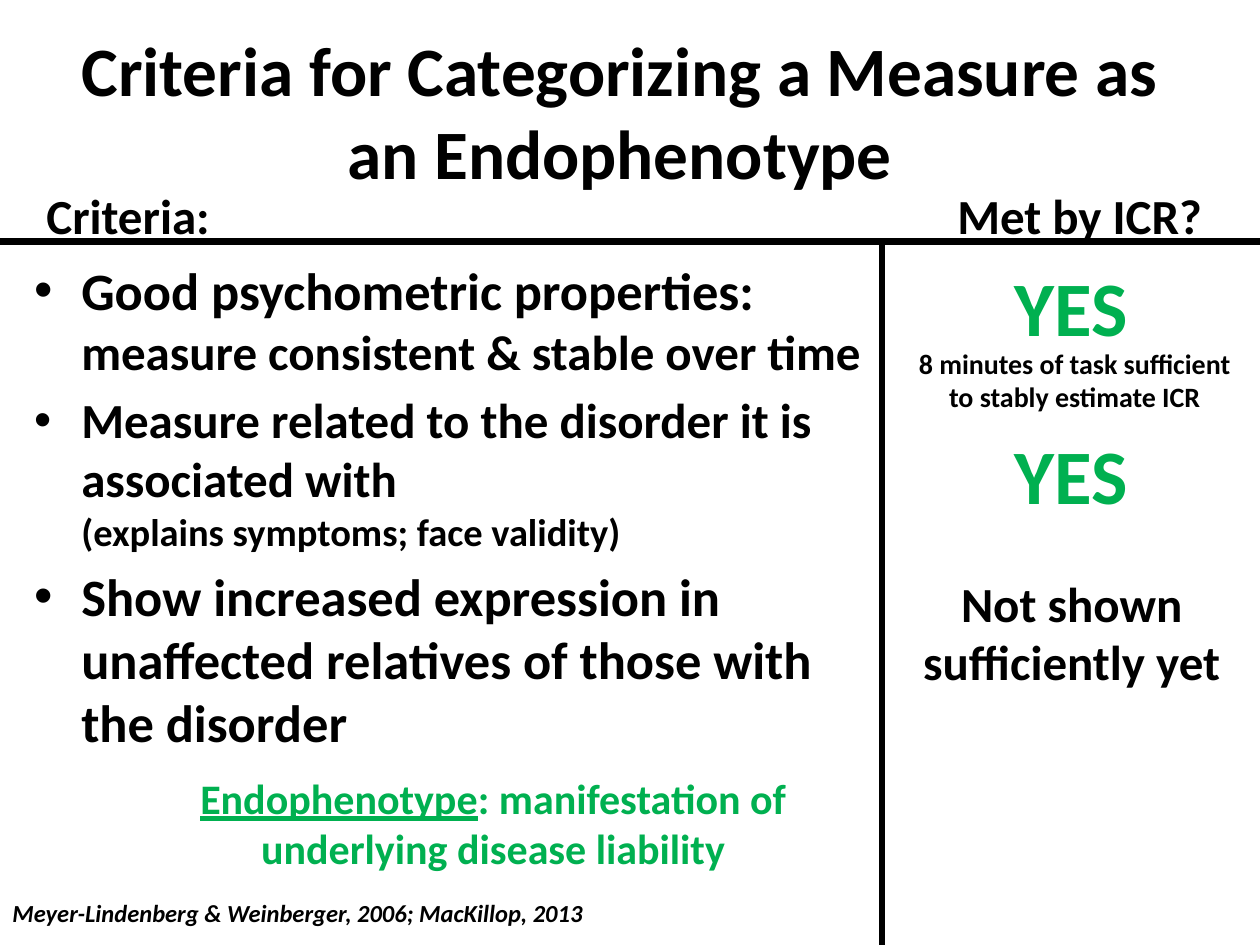
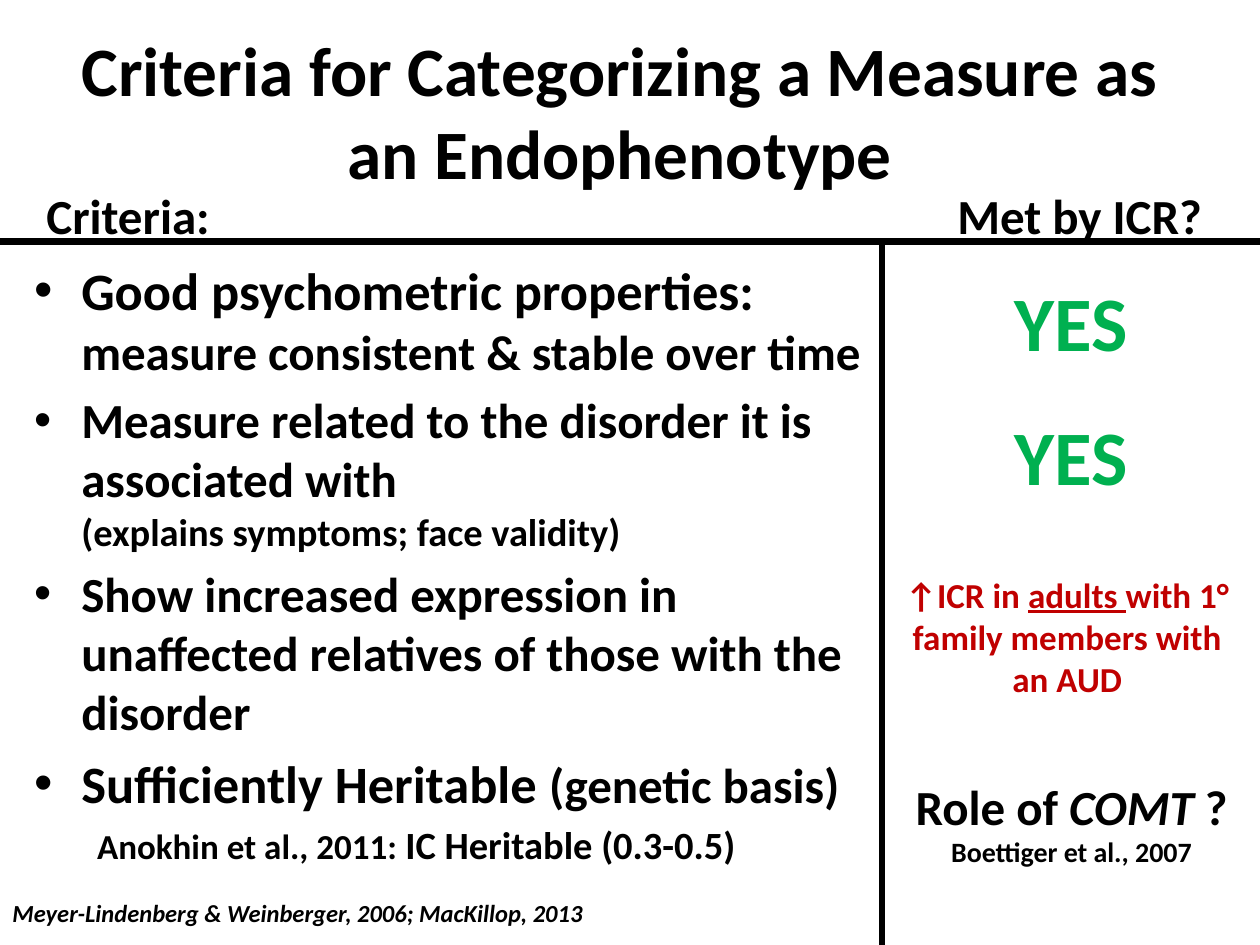
"""Build two slides that check ICR against the criteria for an endophenotype."""
import lxml.etree
import pptx
import pptx.dml.color
import pptx.enum.shapes
import pptx.enum.text
import pptx.oxml.ns
import pptx.util

Inches = pptx.util.Inches
Pt = pptx.util.Pt
qn = pptx.oxml.ns.qn
ALIGN = pptx.enum.text.PP_ALIGN
ANCHOR = pptx.enum.text.MSO_ANCHOR
BLACK = pptx.dml.color.RGBColor(0x00, 0x00, 0x00)
GREEN = pptx.dml.color.RGBColor(0x00, 0xB0, 0x50)
RED = pptx.dml.color.RGBColor(0xC0, 0x00, 0x00)
FONT = "Calibri"
LEFT, CENTER = ALIGN.LEFT, ALIGN.CENTER


def add_spans(para, spans, color=BLACK):
    """Add bold runs given as (text, size, style); a line break may lead a text."""
    for text, size, style in spans:
        if text.startswith("\n"):
            para.add_line_break()
            line_break = para._p.findall(qn("a:br"))[-1]
            lxml.etree.SubElement(line_break, qn("a:rPr"), sz=str(size * 100))
        span = para.add_run()
        span.text = text.lstrip("\n")
        span.font.name = FONT
        span.font.size = Pt(size)
        span.font.bold = True
        span.font.italic = style == "italic"
        span.font.underline = style == "underline"
        span.font.color.rgb = color


def add_label(page, bounds, align, color, *lines):
    """Add a wrapping text box with one paragraph for each list of spans."""
    box = page.shapes.add_textbox(*map(Inches, bounds))
    frame = box.text_frame
    frame.word_wrap = True
    for index, spans in enumerate(lines):
        para = frame.add_paragraph() if index else frame.paragraphs[0]
        para.alignment = align
        add_spans(para, spans, color)


TITLE = "Criteria for Categorizing a Measure as an Endophenotype"
SOURCE = "Meyer-Lindenberg & Weinberger, 2006; MacKillop, 2013"
RELATIVES = "Show increased expression in unaffected relatives of those with the disorder"
SHARED_CRITERIA = [
    [("Good psychometric properties: ", 30, ""),
     ("measure consistent & stable over time", 28, "")],
    [("Measure related to the disorder it is associated with", 28, ""),
     ("\n(explains symptoms; face validity)", 22, "")],
]
HERITABLE = [("Sufficiently Heritable ", 30, ""), ("(genetic basis)", 28, "")]
HERITABLE_EVIDENCE = [("Anokhin et al., 2011: ", 20, ""),
                      ("IC Heritable (0.3-0.5)", 22, "")]

SLIDES = [
    {
        "criteria": [[(RELATIVES, 30, "")]],
        "evidence": None,
        "yes_tops": (2.01, 3.34),
        "labels": [
            ((7.15, 2.7, 2.76, 0.64), BLACK,
             [("8 minutes of task sufficient to stably estimate ICR", 16, "")]),
            ((7.15, 4.5, 2.71, 1.04), BLACK,
             [("Not shown sufficiently yet", 28, "")]),
            ((0.98, 6.08, 5.87, 0.91), GREEN,
             [("Endophenotype", 24, "underline"),
              (": manifestation of underlying disease liability", 24, "")]),
        ],
    },
    {
        "criteria": [[(RELATIVES, 28, "")], HERITABLE],
        "evidence": HERITABLE_EVIDENCE,
        "yes_tops": (2.13, 3.19),
        "labels": [
            ((6.99, 4.5, 2.96, 1.11), RED,
             [("↑ICR in ", 20, ""), ("adults ", 20, "underline"),
              ("with 1° family members with an AUD", 20, "")]),
            ((7.1, 6.11, 2.81, 0.84), BLACK,
             [("Role of ", 28, ""), ("COMT ", 28, "italic"), ("?", 28, "")],
             [("Boettiger et al., 2007", 16, "")]),
        ],
    },
]
RULES = [((0, 1.92, 10, 1.92), 4), ((7, 1.92, 7, 7.5), 3.25)]

deck = pptx.Presentation()
deck.slide_width = Inches(10)
deck.slide_height = Inches(7.5)

for content in SLIDES:
    page = deck.slides.add_slide(deck.slide_layouts[1])
    title = page.shapes.title
    body = page.placeholders[1]
    for holder, bounds in ((title, (0.42, 0.25, 9, 1.25)), (body, (0.17, 2, 6.83, 5.77))):
        holder.left, holder.top, holder.width, holder.height = map(Inches, bounds)
        holder.text_frame.word_wrap = True
        holder.text_frame.auto_size = pptx.enum.text.MSO_AUTO_SIZE.NONE
    title.text_frame.vertical_anchor = ANCHOR.MIDDLE
    title.text_frame.paragraphs[0].alignment = CENTER
    add_spans(title.text_frame.paragraphs[0], [(TITLE, 39.6, "")])

    frame = body.text_frame
    for index, spans in enumerate(SHARED_CRITERIA + content["criteria"]):
        para = frame.add_paragraph() if index else frame.paragraphs[0]
        if index == 0:
            para.space_before = Pt(0)
        add_spans(para, spans)
    if content["evidence"]:
        para = frame.add_paragraph()
        para.level = 1
        properties = para._p.get_or_add_pPr()
        properties.set("marL", str(Inches(0.5)))
        properties.set("indent", "0")
        lxml.etree.SubElement(properties, qn("a:buNone"))
        add_spans(para, content["evidence"])

    add_label(page, (0.27, 1.42, 2, 0.57), LEFT, BLACK, [("Criteria:", 28, "")])
    add_label(page, (7.5, 1.42, 2.3, 0.57), LEFT, BLACK, [("Met by ICR?", 28, "")])
    for ends, width in RULES:
        rule = page.shapes.add_connector(
            pptx.enum.shapes.MSO_CONNECTOR.STRAIGHT, *map(Inches, ends))
        rule.line.color.rgb = BLACK
        rule.line.width = Pt(width)
        lxml.etree.SubElement(rule._element.spPr, qn("a:effectLst"))

    for top in content["yes_tops"]:
        add_label(page, (7.5, top, 2, 0.84), CENTER, GREEN, [("YES", 44, "")])
    for bounds, color, *lines in content["labels"]:
        add_label(page, bounds, CENTER, color, *lines)
    add_label(page, (0, 7.08, 5.5, 0.34), LEFT, BLACK, [(SOURCE, 14, "italic")])

deck.save("out.pptx")
